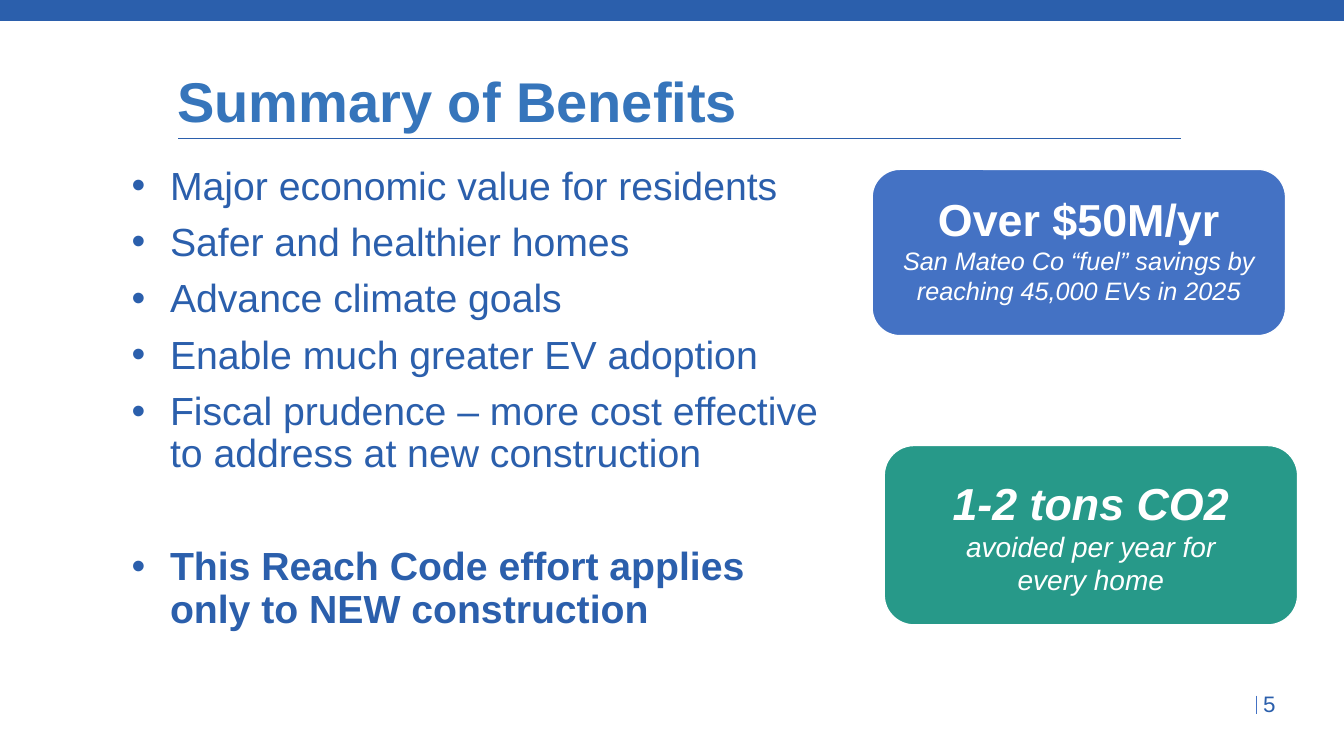
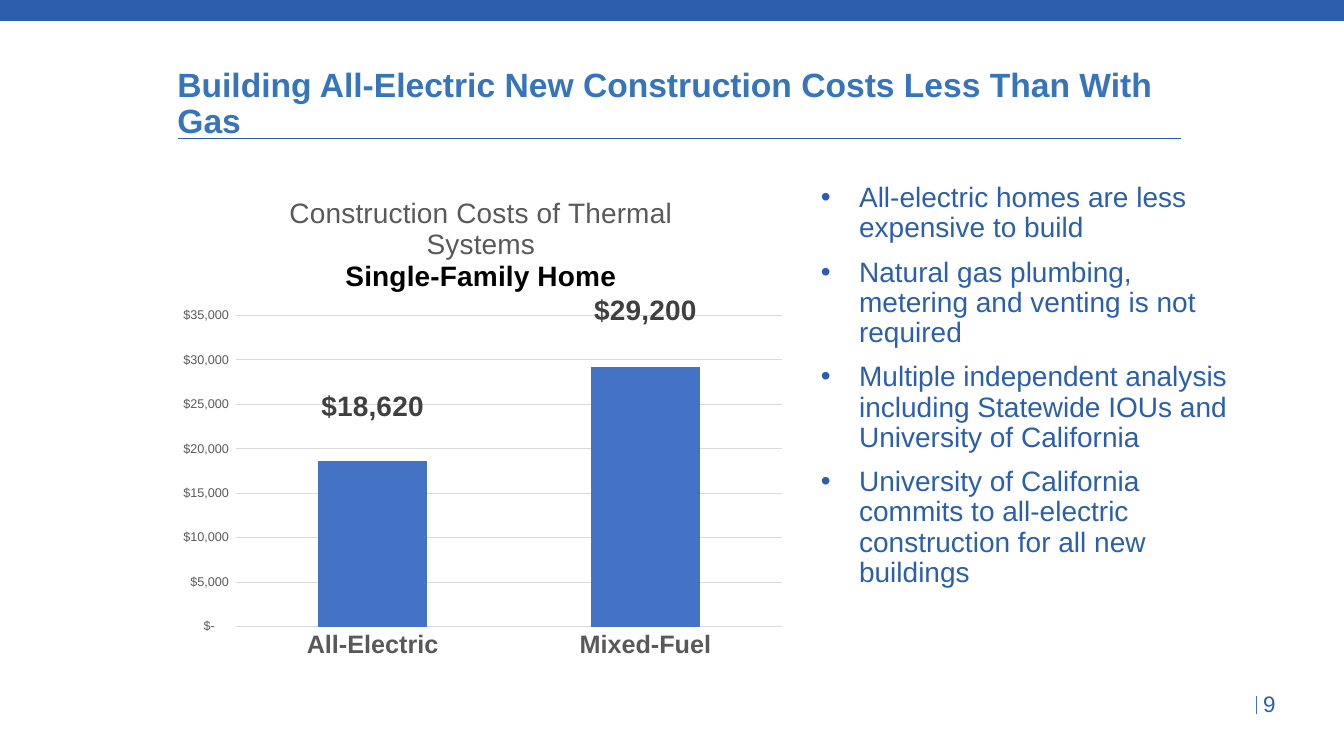
from lxml.etree import SubElement, fromstring
from pptx import Presentation
from pptx.chart.data import CategoryChartData as ChartData
from pptx.dml.color import RGBColor as RGB
from pptx.enum.chart import XL_CHART_TYPE as CT, XL_TICK_MARK as Tick
from pptx.enum.shapes import MSO_CONNECTOR as Conn, MSO_SHAPE as Shape
from pptx.enum.text import MSO_ANCHOR as Anchor, MSO_AUTO_SIZE as Fit, PP_ALIGN as Align
from pptx.oxml.ns import nsdecls, qn
from pptx.util import Inches, Pt

COLORS = {
    "band": "2B5FAC", "title": "3675BB", "blue": "4472C4", "green": "279989",
    "white": "FFFFFF", "black": "000000", "gray": "595959", "dark": "404040",
    "grid": "D9D9D9",
}
FONT = "Arial"
DOLLARS = r'_("$"* #,##0_);_("$"* \(#,##0\);_("$"* "-"??_);_(@_)'


def rgb(name):
    """Return the palette colour with this name."""
    return RGB.from_string(COLORS[name])


def style(font, size, color, bold=False, italic=False):
    """Set every property of a font."""
    font.name, font.size = FONT, Pt(size)
    font.bold, font.italic = bold, italic
    font.color.rgb = rgb(color)


def add_run(p, text, *look):
    """Add one styled run to a paragraph."""
    r = p.add_run()
    r.text = text
    style(r.font, *look)


def set_layout(node, index, **values):
    """Give a chart part a manual layout in shares of the chart."""
    for old in node.findall(qn("c:layout")):
        index = node.index(old)
        node.remove(old)
    layout = fromstring(f"<c:layout {nsdecls('c')}/>")
    manual = SubElement(layout, qn("c:manualLayout"))
    for key, value in values.items():
        SubElement(manual, qn(f"c:{key}")).set("val", str(value))
    node.insert(index, layout)


class Deck:
    """Hold the style and the current slide; lengths are percent of the slide."""

    def __init__(self):
        """Start a wide presentation."""
        self.prs = Presentation()
        self.prs.slide_width, self.prs.slide_height = Inches(13.33), Inches(7.5)
        self.s = None

    def box(self, x, y, w, h):
        """Turn percentages into left, top, width and height."""
        width, height = self.prs.slide_width, self.prs.slide_height
        return [int(v * full / 100) for v, full in
                zip((x, y, w, h), (width, height, width, height))]

    def place(self, sp, *at):
        """Move a placeholder and return its plain text frame."""
        sp.left, sp.top, sp.width, sp.height = self.box(*at)
        tf = sp.text_frame
        tf.word_wrap, tf.auto_size = True, Fit.NONE
        return tf

    def slide(self, title, size, number):
        """Add a slide with its band, title, rule and page number."""
        self.s = self.prs.slides.add_slide(self.prs.slide_layouts[1])
        self.shape(Shape.RECTANGLE, "band", 0, 0, 100, 2.76)
        self.line("band", 13.28, 18.27, 87.85, 18.27)
        self.line("blue", 93.45, 92, 93.45, 94.4)
        tf = self.place(self.s.shapes.title, 12.45, 7.6, 75.39, 12.53)
        tf.vertical_anchor = Anchor.MIDDLE
        p = tf.paragraphs[0]
        p.alignment, p.line_spacing = Align.LEFT, 0.9
        add_run(p, title, size, "title", True)
        page = self.s.shapes.add_textbox(*self.box(93.25, 90.67, 3.6, 4.93))
        add_run(page.text_frame.paragraphs[0], number, 16, "band")

    def shape(self, kind, color, *at):
        """Add a flat filled shape without outline."""
        sp = self.s.shapes.add_shape(kind, *self.box(*at))
        sp.shadow.inherit = False
        sp.fill.solid()
        sp.fill.fore_color.rgb = rgb(color)
        sp.line.fill.background()
        return sp

    def line(self, color, x1, y1, x2, y2):
        """Add a thin straight line."""
        ends = self.box(x1, y1, x2, y2)
        line = self.s.shapes.add_connector(Conn.STRAIGHT, *ends)
        line.line.color.rgb = rgb(color)
        line.line.width = Pt(0.5)
        SubElement(line.element.spPr, qn("a:effectLst"))

    def bullets(self, at, size, items):
        """Fill the body with (text, bold, space before) items."""
        tf = self.place(self.s.placeholders[1], *at)
        for i, (text, bold, gap) in enumerate(items):
            p = tf.add_paragraph() if i else tf.paragraphs[0]
            pPr = p._p.get_or_add_pPr()
            pPr.set("marL", str(Inches(0.38)))
            pPr.set("indent", str(-Inches(0.38)))
            SubElement(pPr, qn("a:buFont")).set("typeface", FONT)
            SubElement(pPr, qn("a:buChar")).set("char", "•")
            p.alignment, p.line_spacing = Align.LEFT, 0.9
            p.space_before = Pt(gap if i else 0)
            add_run(p, text, size, "band", bold)

    def card(self, color, at, margins, lines):
        """Add a rounded card with centred lines of (text, size, bold, italic)."""
        sp = self.shape(Shape.ROUNDED_RECTANGLE, color, *at)
        sp.line.color.rgb = rgb("white")
        sp.line.width = Pt(1)
        tf = sp.text_frame
        tf.word_wrap, tf.vertical_anchor = True, Anchor.TOP
        side, top = map(Inches, margins)
        tf.margin_left = tf.margin_right = side
        tf.margin_top = top
        for i, (text, size, bold, italic) in enumerate(lines):
            p = tf.add_paragraph() if i else tf.paragraphs[0]
            p.alignment = Align.CENTER
            add_run(p, text, size, "white", bold, italic)

    def columns(self, at, title, cats, values, lifts):
        """Add a column chart whose value labels are lifted above the bars."""
        data = ChartData(number_format=DOLLARS)
        data.categories = cats
        data.add_series("Series 1", values)
        frame = self.s.shapes.add_chart(CT.COLUMN_STACKED, *self.box(*at), data)
        chart = frame.chart
        chart.has_legend = False
        style(chart.font, 10, "black")
        tf = chart.chart_title.text_frame
        for i, (text, color, bold) in enumerate(title):
            p = tf.add_paragraph() if i else tf.paragraphs[0]
            add_run(p, text, 20, color, bold)
        set_layout(chart.chart_title._element, 1, xMode="edge", yMode="edge", x=0.19, y=0.03)
        set_layout(chart.element.find(".//" + qn("c:plotArea")), 0, layoutTarget="inner",
                   xMode="edge", yMode="edge", x=0.11, y=0.28, w=0.87, h=0.635)
        self.axes(chart)
        plot = chart.plots[0]
        plot.gap_width, plot.overlap, plot.vary_by_categories = 150, 100, False
        ser = plot.series[0]
        ser.format.fill.solid()
        ser.format.fill.fore_color.rgb = rgb("blue")
        for i in range(len(values)):
            style(ser.points[i].data_label.font, 20, "dark", True)
        for label, lift in zip(chart.element.iter(qn("c:dLbl")), lifts):
            set_layout(label, 1, x=0, y=-lift)
            fmt = fromstring(f'<c:numFmt {nsdecls("c")} sourceLinked="0"/>')
            fmt.set("formatCode", DOLLARS)
            label.insert(2, fmt)
        for leader in chart.element.iter(qn("c:showLeaderLines")):
            leader.set("val", "0")

    def axes(self, chart):
        """Style both axes and the gridlines."""
        cat, val = chart.category_axis, chart.value_axis
        for axis, size, bold in ((cat, 18, True), (val, 9, False)):
            axis.major_tick_mark = axis.minor_tick_mark = Tick.NONE
            style(axis.tick_labels.font, size, "gray", bold)
        val.minimum_scale, val.maximum_scale, val.major_unit = 0, 35000, 5000
        val.tick_labels.number_format = DOLLARS
        val.tick_labels.number_format_is_linked = False
        val.format.line.fill.background()
        for line in (cat.format.line, val.major_gridlines.format.line):
            line.color.rgb = rgb("grid")
            line.width = Pt(0.75)


def main():
    """Build both slides and save them."""
    deck = Deck()
    deck.slide("Summary of Benefits", 40, "5")
    deck.bullets((9.05, 21.33, 53.26, 67.33), 28, [
        ("Major economic value for residents", False, 10),
        ("Safer and healthier homes", False, 10),
        ("Advance climate goals", False, 10),
        ("Enable much greater EV adoption", False, 10),
        ("Fiscal prudence – more cost effective to address at new construction", False, 10),
        ("This Reach Code effort applies only to NEW construction", True, 50.5),
    ])
    deck.card("blue", (64.89, 22.4, 30.76, 22), (0.12, 0.14), [
        ("Over $50M/yr", 32, True, False),
        ("San Mateo Co “fuel” savings by reaching 45,000 EVs in 2025", 18, False, True),
    ])
    deck.card("green", (65.79, 58.93, 30.76, 23.73), (0.5, 0.21), [
        ("1-2 tons CO2", 32, True, True),
        ("avoided per year for every home", 20, False, True),
    ])

    deck.slide("Building All-Electric New Construction Costs Less Than With Gas", 24, "9")
    deck.columns((12.45, 23.6, 46.66, 64.8), [
        ("Construction Costs of Thermal Systems", "gray", False),
        ("Single-Family Home", "black", True),
    ], ["All-Electric", "Mixed-Fuel"], [18620, 29200], [0.28, 0.38])
    deck.bullets((60.32, 23.6, 31.96, 64.8), 20, [(text, False, 10) for text in (
        "All-electric homes are less expensive to build",
        "Natural gas plumbing, metering and venting is not required",
        "Multiple independent analysis including Statewide IOUs and University of California",
        "University of California commits to all-electric construction for all new buildings",
    )])
    deck.prs.save("out.pptx")


if __name__ == "__main__":
    main()
